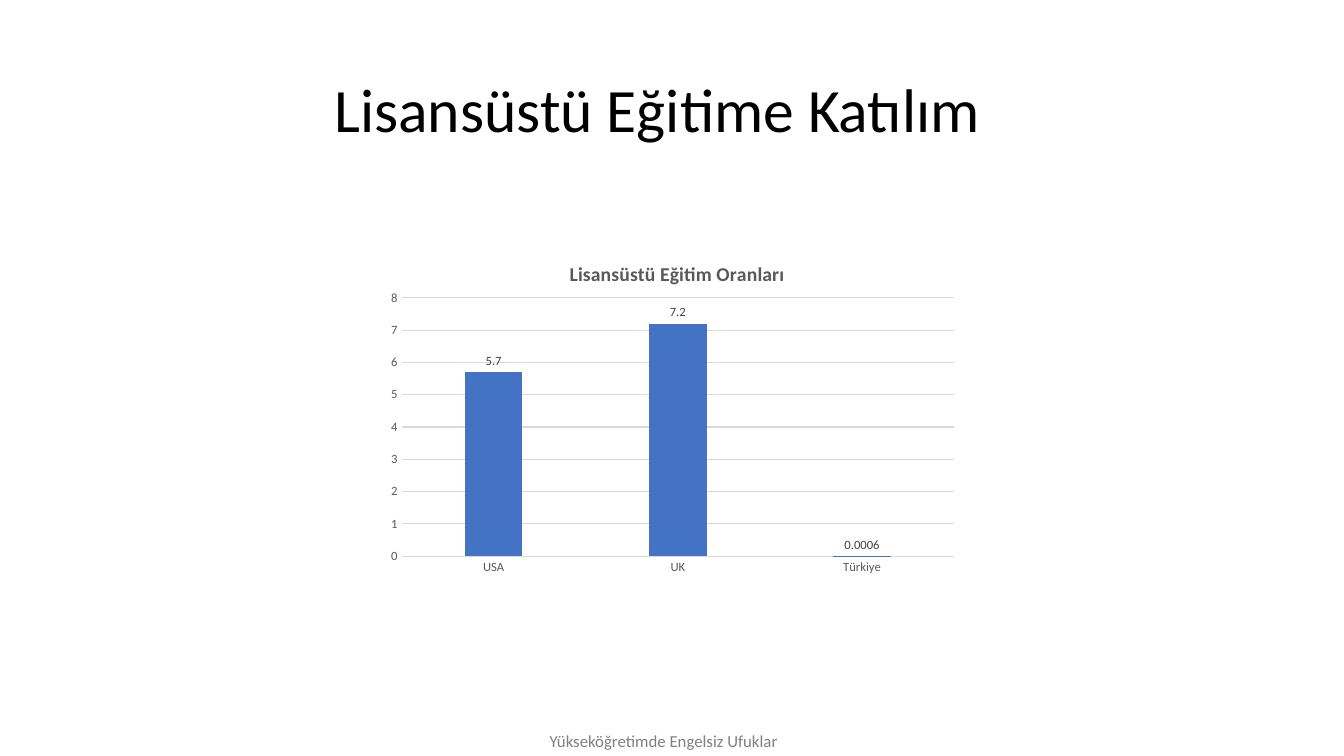
import pptx
import pptx.chart.data
import pptx.dml.color
import pptx.enum.chart
import pptx.enum.text
import pptx.oxml
import pptx.oxml.ns
import pptx.util

PX = 9525
FONT = "Calibri"
BLACK = pptx.dml.color.RGBColor(0x00, 0x00, 0x00)
FOOTER_GRAY = pptx.dml.color.RGBColor(0x80, 0x80, 0x80)
LABEL_GRAY = pptx.dml.color.RGBColor(0x40, 0x40, 0x40)
AXIS_GRAY = pptx.dml.color.RGBColor(0x59, 0x59, 0x59)
GRID_GRAY = pptx.dml.color.RGBColor(0xD9, 0xD9, 0xD9)
BAR_BLUE = pptx.dml.color.RGBColor(0x44, 0x72, 0xC4)
RATES = {"USA": 5.7, "UK": 7.2, "Türkiye": 0.0006}


def emu(box):
    return [length * PX for length in box]


def style_font(font, size, color, bold=False):
    font.name = FONT
    font.size = pptx.util.Pt(size)
    font.color.rgb = color
    font.bold = bold


def write_text(frame, text, size, color, bold=False, align=None, line_spacing=None):
    paragraph = frame.paragraphs[0]
    paragraph.alignment = align
    paragraph.line_spacing = line_spacing
    run = paragraph.add_run()
    run.text = text
    style_font(run.font, size, color, bold)


def style_line(line):
    line.color.rgb = GRID_GRAY
    line.width = pptx.util.Pt(0.75)


def set_layout(parent, index, target="", **fractions):
    for old in parent.findall(pptx.oxml.ns.qn("c:layout")):
        parent.remove(old)
    values = "".join(f'<c:{key} val="{value}"/>' for key, value in fractions.items())
    parent.insert(index, pptx.oxml.parse_xml(
        f'<c:layout {pptx.oxml.ns.nsdecls("c")}><c:manualLayout>{target}'
        f'<c:xMode val="edge"/><c:yMode val="edge"/>{values}'
        '</c:manualLayout></c:layout>'))


def add_heading(slide, box):
    frame = slide.shapes.add_textbox(*emu(box)).text_frame
    frame.word_wrap = True
    frame.vertical_anchor = pptx.enum.text.MSO_ANCHOR.MIDDLE
    frame.margin_right = 37 * PX
    write_text(frame, "Lisansüstü Eğitime Katılım", size=44, color=BLACK,
               align=pptx.enum.text.PP_ALIGN.CENTER, line_spacing=0.9)


def style_axes(chart):
    for axis in (chart.category_axis, chart.value_axis):
        axis.major_tick_mark = pptx.enum.chart.XL_TICK_MARK.NONE
        axis.minor_tick_mark = pptx.enum.chart.XL_TICK_MARK.NONE
        style_font(axis.tick_labels.font, 9, AXIS_GRAY)
    style_line(chart.category_axis.format.line)
    rate_axis = chart.value_axis
    rate_axis.format.line.fill.background()
    rate_axis.minimum_scale = 0
    rate_axis.maximum_scale = 8
    rate_axis.major_unit = 1
    style_line(rate_axis.major_gridlines.format.line)


def style_bars(plot):
    plot.vary_by_categories = False
    plot.gap_width = 219
    plot.overlap = -27
    rates = plot.series[0]
    rates.format.fill.solid()
    rates.format.fill.fore_color.rgb = BAR_BLUE
    labels = rates.data_labels
    labels.show_value = True
    labels.number_format = "General"
    labels.number_format_is_linked = False
    labels.position = pptx.enum.chart.XL_LABEL_POSITION.OUTSIDE_END
    style_font(labels.font, 9, LABEL_GRAY)


def add_rate_chart(slide, box):
    data = pptx.chart.data.CategoryChartData()
    data.categories = list(RATES)
    data.add_series("Series 1", list(RATES.values()))
    chart = slide.shapes.add_chart(
        pptx.enum.chart.XL_CHART_TYPE.COLUMN_CLUSTERED, *emu(box), data).chart
    style_font(chart.font, 10, BLACK)
    chart.has_legend = False
    chart.has_title = True
    heading = chart.chart_title
    write_text(heading.text_frame, "Lisansüstü Eğitim Oranları",
               size=14, color=AXIS_GRAY, bold=True)
    heading.include_in_layout = False
    set_layout(heading._element, 1, x=0.32, y=0.05)
    style_axes(chart)
    style_bars(chart.plots[0])
    plot_area = chart._chartSpace.chart.plotArea
    set_layout(plot_area, 0, '<c:layoutTarget val="inner"/>',
               x=0.04, y=0.17, w=0.94, h=0.75)


def add_footer(slide, box):
    frame = slide.shapes.add_textbox(*emu(box)).text_frame
    frame.word_wrap = False
    frame.auto_size = pptx.enum.text.MSO_AUTO_SIZE.SHAPE_TO_FIT_TEXT
    write_text(frame, "Yükseköğretimde Engelsiz Ufuklar", size=12, color=FOOTER_GRAY)


def main():
    deck = pptx.Presentation()
    deck.slide_width = 1280 * PX
    deck.slide_height = 720 * PX
    slide = deck.slides.add_slide(deck.slide_layouts[6])
    add_heading(slide, (88, 38, 1104, 139))
    add_rate_chart(slide, (360, 228, 560, 328))
    add_footer(slide, (514, 691, 252, 29))
    deck.save("out.pptx")


if __name__ == "__main__":
    main()
